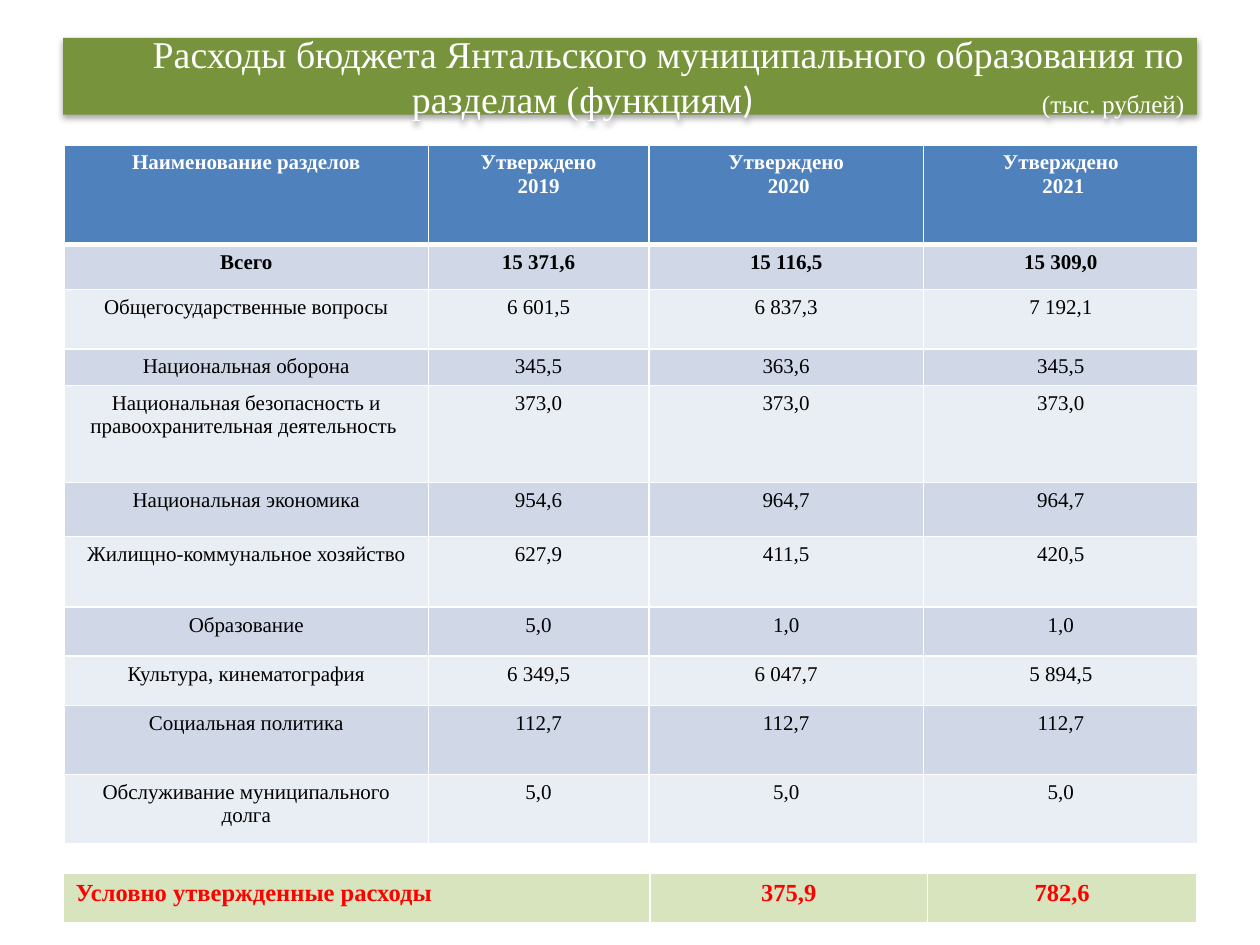
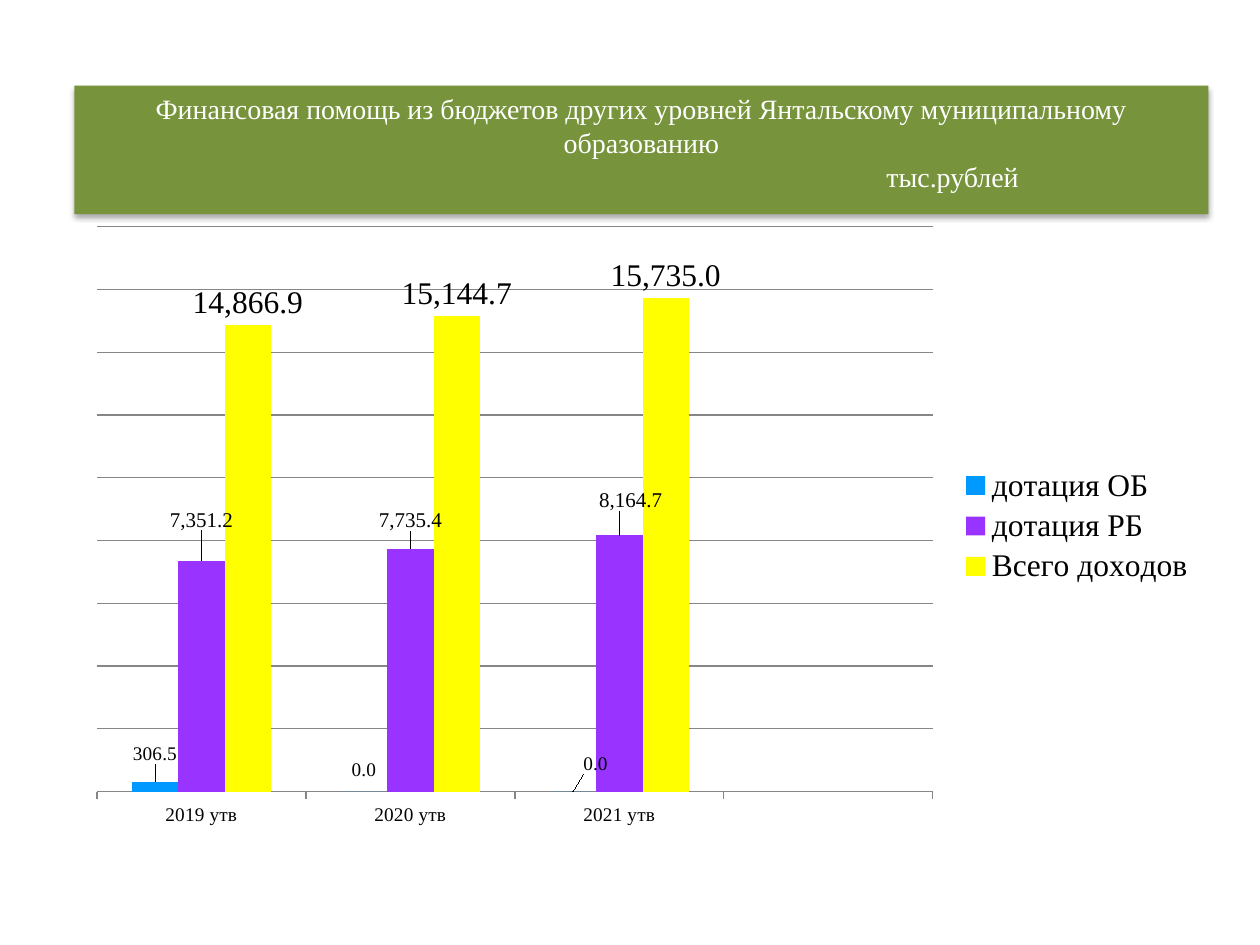
from dataclasses import dataclass

from lxml import etree
from pptx import Presentation
from pptx.chart.data import CategoryChartData
from pptx.dml.color import RGBColor
from pptx.enum import chart as ch, text
from pptx.oxml import parse_xml
from pptx.oxml.ns import nsdecls, qn
from pptx.util import Inches, Pt


@dataclass(frozen=True)
class Theme:
    font: str = "Times New Roman"
    bracket_font: str = "Calibri"
    white: str = "FFFFFF"
    black: str = "000000"
    red: str = "FF0000"
    band: str = "77933C"
    header: str = "4F81BD"
    row_dark: str = "D0D8E8"
    row_light: str = "E9EDF4"
    reserve: str = "D7E4BD"
    grid: str = "868686"
    title: float = 21.6
    unit: float = 14.4
    subtitle: float = 16
    cell: float = 12
    reserve_size: float = 14
    axis: float = 11
    legend: float = 18


T = Theme()
ALIGN = text.PP_ALIGN
COLUMNS = [2.89, 1.75, 2.18, 2.18]
ROW_HEIGHTS = [0.79, 0.36, 0.47, 0.29, 0.77, 0.43, 0.56, 0.39, 0.39, 0.55, 0.55]
EXPENSES = [
    ["Наименование разделов", "Утверждено\n2019", "Утверждено\n 2020", "Утверждено\n 2021"],
    ["Всего", "15 371,6", "15 116,5", "15 309,0"],
    ["Общегосударственные вопросы", "6 601,5", "6 837,3", "7 192,1"],
    ["Национальная оборона", "345,5", "363,6", "345,5"],
    ["Национальная безопасность и правоохранительная деятельность ", "373,0", "373,0", "373,0"],
    ["Национальная экономика", "954,6", "964,7", "964,7"],
    ["Жилищно-коммунальное хозяйство", "627,9", "411,5", "420,5"],
    ["Образование", "5,0", "1,0", "1,0"],
    ["Культура, кинематография", "6 349,5", "6 047,7", "5 894,5"],
    ["Социальная политика", "112,7", "112,7", "112,7"],
    ["Обслуживание муниципального долга", "5,0", "5,0", "5,0"],
]
RESERVE = ["Условно утвержденные расходы", "375,9", "782,6"]
YEARS = ["2019 утв", "2020 утв", "2021 утв", ""]
NUMBER = "#,##0.0"
INCOME = [
    ("дотация ОБ", [306.5, 0, 0, None], "0099FF", 11,
     [(0, -0.02), (0, -0.01), (0.02, -0.02)]),
    ("дотация РБ", [7351.2, 7735.4, 8164.7, None], "9933FF", 12,
     [(0, -0.04), (0, -0.02), (0.01, -0.03)]),
    ("Всего доходов", [14866.9, 15144.7, 15735, None], "FFFF00", 18, []),
]


def rgb(value):
    return RGBColor.from_string(value)


def set_font(font, size, color=T.black, name=T.font, bold=False):
    font.size = Pt(size)
    font.name = name
    font.bold = bold
    font.color.rgb = rgb(color)


def add_text(p, content, align=None, **style):
    if align is not None:
        p.alignment = align
    r = p.add_run()
    r.text = content
    set_font(r.font, **style)


def title_band(s, left, top, width, height, anchor):
    sp = s.shapes.title
    sp.left, sp.top, sp.width, sp.height = map(Inches, (left, top, width, height))
    sp.fill.solid()
    sp.fill.fore_color.rgb = rgb(T.band)
    sp._element.spPr.append(parse_xml(
        f'<a:effectLst {nsdecls("a")}><a:outerShdw blurRad="40000" dist="23000" '
        f'dir="5400000" rotWithShape="0"><a:srgbClr val="{T.black}">'
        '<a:alpha val="35000"/></a:srgbClr></a:outerShdw></a:effectLst>'))
    tf = sp.text_frame
    tf.auto_size = text.MSO_AUTO_SIZE.NONE
    tf.vertical_anchor = anchor
    return tf


def set_borders(cell, top=1, bottom=1):
    tcPr = cell._tc.get_or_add_tcPr()
    for i, (side, width) in enumerate((("L", 1), ("R", 1), ("T", top), ("B", bottom))):
        tcPr.insert(i, parse_xml(
            f'<a:ln{side} {nsdecls("a")} w="{Pt(width)}"><a:solidFill>'
            f'<a:srgbClr val="{T.white}"/></a:solidFill></a:ln{side}>'))


def fill_cell(cell, content, fill, align=ALIGN.CENTER, top=1, bottom=1, **style):
    cell.fill.solid()
    cell.fill.fore_color.rgb = rgb(fill)
    set_borders(cell, top, bottom)
    tf = cell.text_frame
    for i, line in enumerate(content.split("\n")):
        p = tf.add_paragraph() if i else tf.paragraphs[0]
        add_text(p, line, align, **style)


def add_grid(s, left, top, widths, heights):
    frame = s.shapes.add_table(len(heights), len(widths), Inches(left), Inches(top),
                               Inches(sum(widths)), Inches(sum(heights)))
    table = frame.table
    for column, width in zip(table.columns, widths):
        column.width = Inches(width)
    for row, height in zip(table.rows, heights):
        row.height = Inches(height)
    return table


def expenses_table(s):
    table = add_grid(s, 0.51, 1.15, COLUMNS, ROW_HEIGHTS)
    for i, values in enumerate(EXPENSES):
        fill = T.header if i == 0 else T.row_dark if i % 2 else T.row_light
        for j, value in enumerate(values):
            fill_cell(table.cell(i, j), value, fill, size=T.cell, bold=i < 2,
                      color=T.black if i else T.white,
                      top=3 if i == 1 else 1, bottom=1 if i else 3)


def reserve_table(s):
    table = add_grid(s, 0.5, 6.93, [4.66, 2.2, 2.14], [0.41])
    for j, value in enumerate(RESERVE):
        fill_cell(table.cell(0, j), value, T.reserve, ALIGN.CENTER if j else ALIGN.LEFT,
                  bottom=3, size=T.reserve_size, color=T.red, bold=True)


def manual_layout(x, y, **extent):
    layout = etree.Element(qn("c:layout"))
    manual = etree.SubElement(layout, qn("c:manualLayout"))
    items = {"x": x, "y": y, **extent}
    if extent:
        items = {"layoutTarget": "inner", "xMode": "edge", "yMode": "edge", **items}
    for tag, value in items.items():
        etree.SubElement(manual, qn(f"c:{tag}")).set("val", str(value))
    return layout


def label_series(series, size, offsets):
    labels = series.data_labels
    labels.show_value = True
    labels.number_format = NUMBER
    labels.number_format_is_linked = False
    labels.position = ch.XL_LABEL_POSITION.OUTSIDE_END
    set_font(labels.font, size)
    for i, (x, y) in enumerate(offsets):
        label = series.points[i].data_label
        set_font(label.font, size)
        label.position = ch.XL_LABEL_POSITION.OUTSIDE_END
        idx = label._get_or_add_dLbl().find(qn("c:idx"))
        idx.addnext(parse_xml(
            f'<c:numFmt {nsdecls("c")} formatCode="{NUMBER}" sourceLinked="0"/>'))
        idx.addnext(manual_layout(x, y))


def income_chart(s):
    data = CategoryChartData(number_format=NUMBER)
    data.categories = YEARS
    for name, values, *_ in INCOME:
        data.add_series(name, values)
    chart = s.shapes.add_chart(ch.XL_CHART_TYPE.COLUMN_CLUSTERED, Inches(0.59), Inches(1.7),
                               Inches(9), Inches(4.95), data).chart
    set_font(chart.font, T.legend)
    chart.has_title = False
    chart.has_legend = True
    chart.legend.position = ch.XL_LEGEND_POSITION.RIGHT
    chart.legend.include_in_layout = False
    set_font(chart.legend.font, T.legend)

    values = chart.value_axis
    values.visible = False
    values.minimum_scale, values.maximum_scale, values.major_unit = 0, 18000, 2000
    values.has_major_gridlines = True
    years = chart.category_axis
    years.major_tick_mark = ch.XL_TICK_MARK.OUTSIDE
    set_font(years.tick_labels.font, T.axis)
    for line in (values.major_gridlines.format.line, years.format.line):
        line.color.rgb = rgb(T.grid)
        line.width = Pt(0.75)

    plot = chart.plots[0]
    plot.gap_width = 150
    plot.overlap = 0
    plot.vary_by_categories = False
    for series, (_, _, color, size, offsets) in zip(plot.series, INCOME):
        series.format.fill.solid()
        series.format.fill.fore_color.rgb = rgb(color)
        label_series(series, size, offsets)

    area = chart._chartSpace.chart.plotArea
    for old in area.findall(qn("c:layout")):
        area.remove(old)
    area.insert(0, manual_layout(0.02, 0.02, w=0.737, h=0.906))


def expenses_slide(prs):
    s = prs.slides.add_slide(prs.slide_layouts[5])
    p = title_band(s, 0.5, 0.3, 9, 0.61, text.MSO_ANCHOR.MIDDLE).paragraphs[0]
    add_text(p, "Расходы бюджета Янтальского муниципального образования по разделам (функциям",
             ALIGN.RIGHT, size=T.title, color=T.white)
    add_text(p, ")\t", size=T.title, color=T.white, name=T.bracket_font)
    add_text(p, "(тыс. рублей)", size=T.unit, color=T.white)
    p._p.get_or_add_pPr().append(parse_xml(
        f'<a:tabLst {nsdecls("a")}><a:tab pos="{Inches(5)}" algn="l"/></a:tabLst>'))
    expenses_table(s)
    reserve_table(s)


def income_slide(prs):
    s = prs.slides.add_slide(prs.slide_layouts[5])
    tf = title_band(s, 0.59, 0.68, 9, 1.02, text.MSO_ANCHOR.TOP)
    style = dict(align=ALIGN.CENTER, size=T.subtitle, color=T.white)
    add_text(tf.paragraphs[0], "Финансовая помощь из бюджетов других уровней "
             "Янтальскому муниципальному образованию", **style)
    unit = tf.add_paragraph()
    add_text(unit, "тыс.рублей", **style)
    unit.space_before = Pt(0)
    unit._p.get_or_add_pPr().set("marL", str(Inches(4.94)))
    income_chart(s)


def main():
    prs = Presentation()
    prs.slide_width, prs.slide_height = Inches(10), Inches(7.5)
    expenses_slide(prs)
    income_slide(prs)
    prs.save("out.pptx")


if __name__ == "__main__":
    main()
